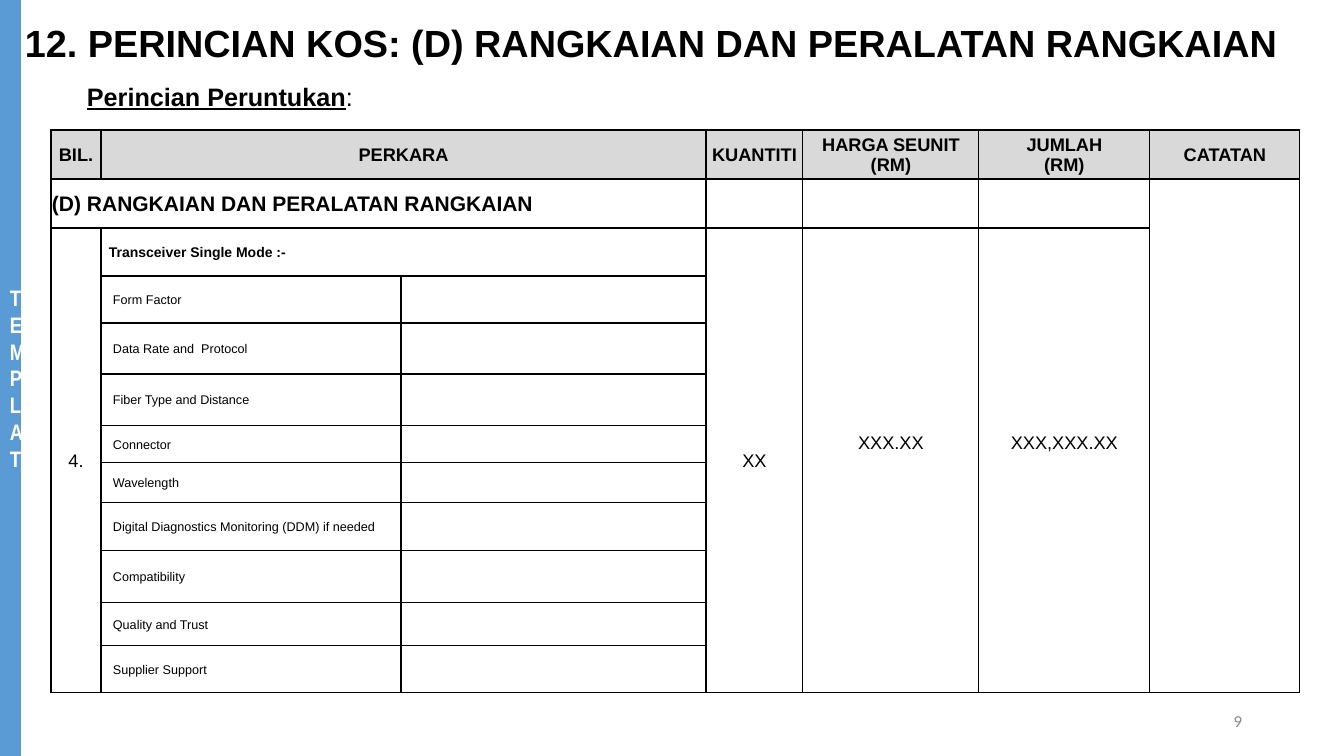
"""Build the cost breakdown slide for network equipment."""
import pptx
import pptx.util
import pptx.dml.color
import pptx.enum.shapes
import pptx.enum.text
import pptx.oxml
from dataclasses import dataclass

ALIGN = pptx.enum.text.PP_ALIGN
MIDDLE = pptx.enum.text.MSO_ANCHOR.MIDDLE
SCALE = 914400 / 100.8


@dataclass
class Theme:
    ink: str = "000000"
    paper: str = "FFFFFF"
    bar: str = "5B9BD5"
    head: str = "D9D9D9"
    muted: str = "888888"
    font: str = "Arial"
    narrow: str = "Arial Narrow"
    plain: str = "Calibri"
    title: int = 27
    sub: int = 18
    side: int = 16
    group: int = 15
    body: int = 13
    page: int = 12
    item: int = 10
    detail: int = 9


theme = Theme()


def px(count):
    return pptx.util.Emu(round(count * SCALE))


def write(frame, text, size, bold=None, align=ALIGN.LEFT, color=theme.ink, font=theme.font):
    frame.word_wrap = True
    frame.text = text
    for para in frame.paragraphs:
        para.alignment = align
        para.font.size = pptx.util.Pt(size)
        para.font.bold = bold
        para.font.name = font
        para.font.color.rgb = pptx.dml.color.RGBColor.from_string(color)


deck = pptx.Presentation()
deck.slide_width, deck.slide_height = px(1344), px(756)
slide = deck.slides.add_slide(deck.slide_layouts[6])
shapes = slide.shapes

side = shapes.add_shape(pptx.enum.shapes.MSO_SHAPE.RECTANGLE, 0, 0, px(21), px(756))
side.shadow.inherit = False
side.fill.solid()
side.fill.fore_color.rgb = pptx.dml.color.RGBColor.from_string(theme.bar)
side.line.fill.background()
write(side.text_frame, "TEMPLAT", theme.side, True, ALIGN.CENTER, theme.paper, theme.narrow)

page = shapes.add_textbox(px(950), px(701), px(302), px(40)).text_frame
page.vertical_anchor = MIDDLE
write(page, "9", theme.page, align=ALIGN.RIGHT, color=theme.muted, font=theme.plain)

title = shapes.add_textbox(px(15), px(15), px(1329), px(81)).text_frame
write(title, "12. PERINCIAN KOS: (D) RANGKAIAN DAN PERALATAN RANGKAIAN", theme.title, True)

sub = shapes.add_textbox(px(77), px(76), px(842), px(40)).text_frame
write(sub, "Perincian Peruntukan", theme.sub)
label = sub.paragraphs[0].runs[0]
label.font.bold = label.font.underline = True
sub.paragraphs[0].add_run().text = ":"

widths = [50, 300, 305, 97, 176, 171, 150]
heights = [49, 49, 48, 47, 51, 52, 37, 40, 48, 52, 43, 47]
table = shapes.add_table(
    len(heights), len(widths), px(51), px(130), px(sum(widths)), px(sum(heights))
).table
table.first_row = table.horz_banding = False
for col, width in zip(table.columns, widths):
    col.width = px(width)
for row, height in zip(table.rows, heights):
    row.height = px(height)

for index, cell in enumerate(table.iter_cells()):
    cell.fill.solid()
    shade = theme.head if index < len(widths) else theme.paper
    cell.fill.fore_color.rgb = pptx.dml.color.RGBColor.from_string(shade)
    cell.vertical_anchor = MIDDLE
    cell.margin_left = cell.margin_right = cell.margin_top = px(1)
    cell.margin_bottom = 0
    cell.text_frame.paragraphs[0].font.size = pptx.util.Pt(theme.detail)
    props = cell._tc.get_or_add_tcPr()
    for spot, edge in enumerate(["lnL", "lnR", "lnT", "lnB"]):
        props.insert(spot, pptx.oxml.parse_xml(
            f'<a:{edge} xmlns:a="http://schemas.openxmlformats.org/drawingml/2006/main" w="12700">'
            f'<a:solidFill><a:srgbClr val="{theme.ink}"/></a:solidFill></a:{edge}>'
        ))

merges = [(0, 1, 0, 2), (1, 0, 1, 2), (1, 6, 11, 6), (2, 1, 2, 2)]
merges += [(2, col, 11, col) for col in (0, 3, 4, 5)]
for top, left, bottom, right in merges:
    table.cell(top, left).merge(table.cell(bottom, right))

heads = {0: "BIL.", 1: "PERKARA", 3: "KUANTITI", 4: "HARGA SEUNIT\n(RM)",
         5: "JUMLAH\n(RM)", 6: "CATATAN"}
for col, text in heads.items():
    write(table.cell(0, col).text_frame, text, theme.body, True, ALIGN.CENTER)

write(table.cell(1, 0).text_frame, "(D) RANGKAIAN DAN PERALATAN RANGKAIAN", theme.group, True)

values = {0: "4.", 3: "XX", 4: "XXX.XX", 5: "XXX,XXX.XX"}
for col, text in values.items():
    write(table.cell(2, col).text_frame, text, theme.body, align=ALIGN.CENTER)
for col in (4, 5):
    table.cell(2, col).margin_bottom = px(36)

item = table.cell(2, 1)
item.margin_left = px(8)
write(item.text_frame, "Transceiver Single Mode :-", theme.item, True)

details = ["Form Factor", "Data Rate and  Protocol", "Fiber Type and Distance", "Connector",
           "Wavelength", "Digital Diagnostics Monitoring (DDM) if needed", "Compatibility",
           "Quality and Trust", "Supplier Support"]
for row, text in enumerate(details, 3):
    cell = table.cell(row, 1)
    cell.margin_left = px(12)
    write(cell.text_frame, text, theme.detail)

deck.save("out.pptx")
